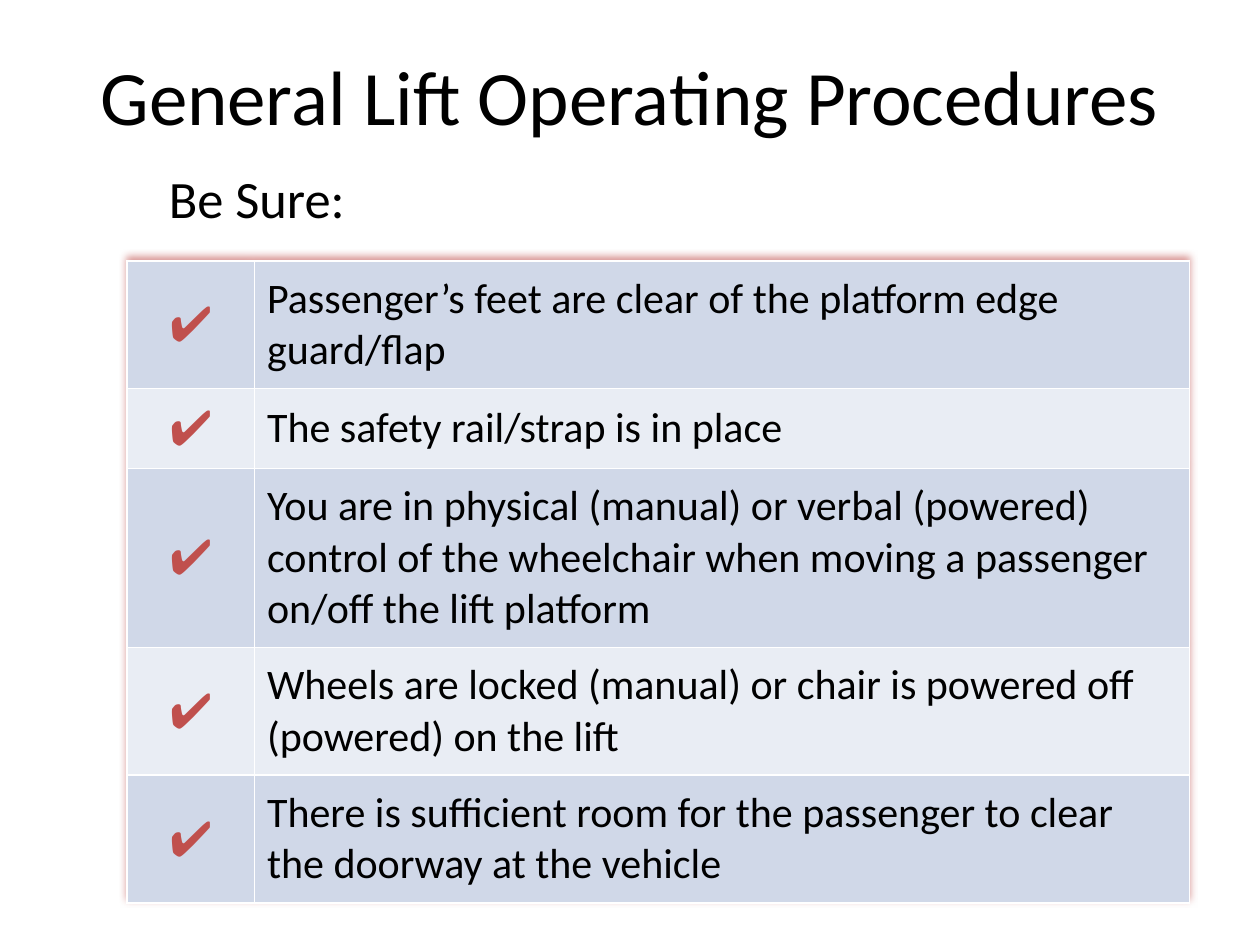
from lxml.etree import SubElement
from pptx import Presentation
from pptx.dml.color import RGBColor
from pptx.enum.text import MSO_ANCHOR, PP_ALIGN
from pptx.oxml import parse_xml
from pptx.oxml.ns import nsdecls, qn
from pptx.util import Inches, Pt

COLORS = {
    "text": "000000",
    "check": "C0504D",
    "odd": "D0D8E8",
    "even": "E9EDF4",
    "border": "FFFFFF",
}
CHECKS = [
    ("Passenger’s feet are clear of the platform edge guard/flap", 2),
    ("The safety rail/strap is in place", 1),
    ("You are in physical (manual) or verbal (powered) control of the "
     "wheelchair when moving a passenger on/off the lift platform", 3),
    ("Wheels are locked (manual) or chair is powered off (powered) on the lift", 2),
    ("There is sufficient room for the passenger to clear the doorway "
     "at the vehicle", 2),
]
COLUMNS = (1.01, 7.42)
LINE_HEIGHT = 0.4
ROW_PADDING = 0.21
CELL_INSET = 0.1


def format_text(tf, size, color, font="Calibri", align=PP_ALIGN.LEFT):
    for p in tf.paragraphs:
        p.alignment = align
        for r in p.runs:
            r.font.size = Pt(size)
            r.font.name = font
            r.font.color.rgb = RGBColor.from_string(COLORS[color])


def fill_placeholder(sp, box, text, size, align=PP_ALIGN.LEFT):
    sp.left, sp.top, sp.width, sp.height = map(Inches, box)
    sp.text_frame.text = text
    format_text(sp.text_frame, size, "text", align=align)
    return sp.text_frame.paragraphs[0]


def remove_bullet(p):
    pPr = p._p.get_or_add_pPr()
    pPr.set("marL", "0")
    pPr.set("indent", "0")
    SubElement(pPr, qn("a:buNone"))


def add_borders(cell):
    tcPr = cell._tc.get_or_add_tcPr()
    for i, side in enumerate(("lnL", "lnR", "lnT", "lnB")):
        tcPr.insert(i, parse_xml(
            f'<a:{side} {nsdecls("a")} w="{Pt(1)}"><a:solidFill>'
            f'<a:srgbClr val="{COLORS["border"]}"/></a:solidFill></a:{side}>'))


def add_table_shadow(table):
    table._tbl.tblPr.insert(0, parse_xml(
        f'<a:effectLst {nsdecls("a")}><a:outerShdw blurRad="{Pt(4)}" '
        f'dist="{Pt(2)}" dir="16200000" rotWithShape="0">'
        f'<a:srgbClr val="{COLORS["check"]}"><a:alpha val="60000"/></a:srgbClr>'
        '</a:outerShdw></a:effectLst>'))


def fill_cell(cell, text, fill, **style):
    cell.text = text
    cell.vertical_anchor = MSO_ANCHOR.MIDDLE
    cell.margin_left = cell.margin_right = Inches(CELL_INSET)
    cell.margin_top = cell.margin_bottom = Inches(CELL_INSET)
    cell.fill.solid()
    cell.fill.fore_color.rgb = RGBColor.from_string(COLORS[fill])
    add_borders(cell)
    format_text(cell.text_frame, **style)


def add_checklist(slide, left, top):
    heights = [ROW_PADDING + LINE_HEIGHT * lines for _, lines in CHECKS]
    table = slide.shapes.add_table(
        len(CHECKS), len(COLUMNS), Inches(left), Inches(top),
        Inches(sum(COLUMNS)), Inches(sum(heights))).table
    table.first_row = False
    table.horz_banding = False
    add_table_shadow(table)
    for column, width in zip(table.columns, COLUMNS):
        column.width = Inches(width)
    for i, (text, _) in enumerate(CHECKS):
        table.rows[i].height = Inches(heights[i])
        fill = "even" if i % 2 else "odd"
        fill_cell(table.cell(i, 0), "✔", fill, size=28, color="check",
                  font="Arial", align=PP_ALIGN.CENTER)
        fill_cell(table.cell(i, 1), text, fill, size=24, color="text")


def main():
    prs = Presentation()
    prs.slide_width, prs.slide_height = Inches(10), Inches(7.5)
    slide = prs.slides.add_slide(prs.slide_layouts[1])
    title, body = slide.placeholders
    fill_placeholder(title, (0.5, 0.26, 9, 0.99),
                     "General Lift Operating Procedures", 44, PP_ALIGN.CENTER)
    title.text_frame.vertical_anchor = MSO_ANCHOR.MIDDLE
    p = fill_placeholder(body, (1.24, 1.27, 1.96, 0.97), "Be Sure:", 30)
    p.space_before = Pt(7)
    remove_bullet(p)
    add_checklist(slide, 1.01, 2.07)
    prs.save("out.pptx")


if __name__ == "__main__":
    main()
